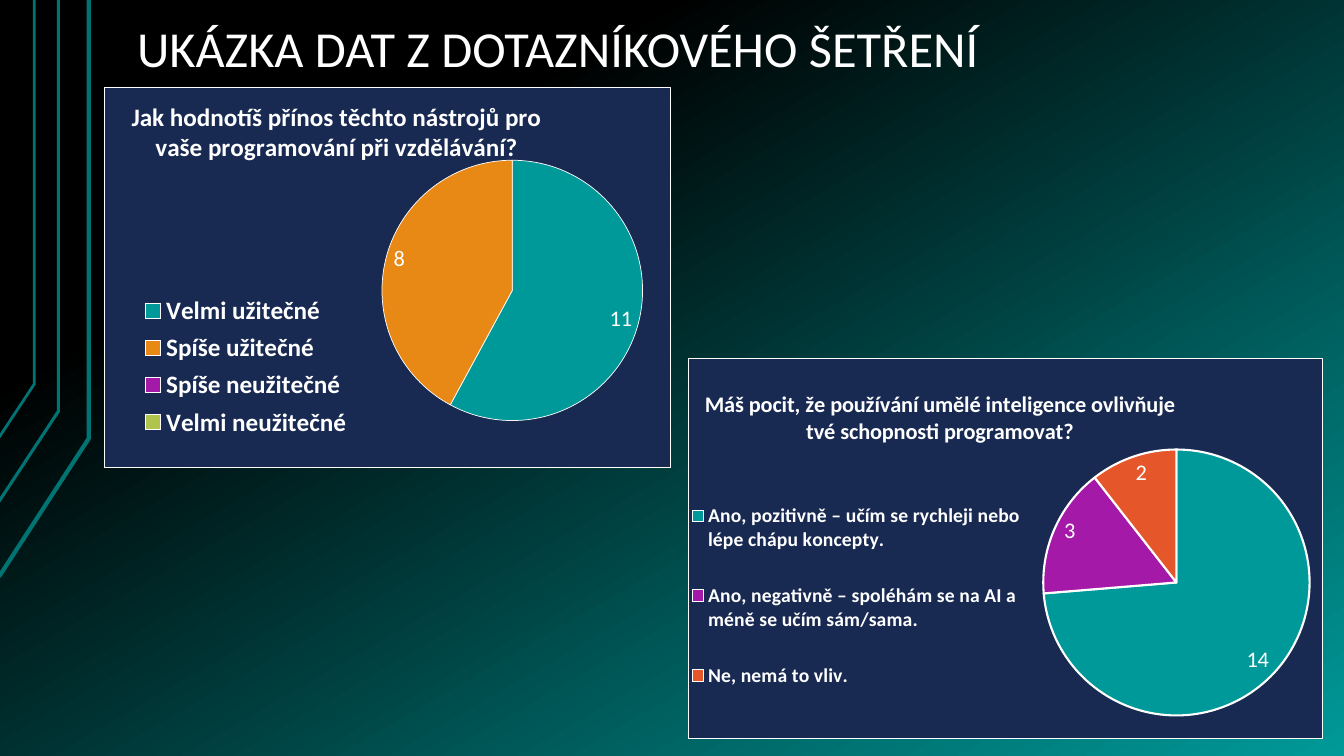
from lxml import etree
from pptx import Presentation
from pptx.chart.data import CategoryChartData
from pptx.dml.color import RGBColor
from pptx.enum.chart import XL_CHART_TYPE as CT, XL_LABEL_POSITION as LP, XL_LEGEND_POSITION as LG
from pptx.enum.text import MSO_ANCHOR
from pptx.oxml import parse_xml
from pptx.oxml.ns import nsdecls, qn
from pptx.util import Inches, Pt

WHITE = RGBColor(0xFF, 0xFF, 0xFF)
BLACK = RGBColor(0, 0, 0)
TEAL = RGBColor(0x00, 0x99, 0x99)
DARK_TEAL = RGBColor(0x00, 0x73, 0x73)
NAVY = RGBColor(0x19, 0x2A, 0x52)
ORANGE = RGBColor(0xE9, 0x89, 0x15)
PURPLE = RGBColor(0xA4, 0x19, 0xA7)
GREEN = RGBColor(0xAF, 0xC3, 0x4D)
RED = RGBColor(0xE5, 0x57, 0x2B)
FONT = "Calibri"

TITLE = "UKÁZKA DAT Z DOTAZNÍKOVÉHO ŠETŘENÍ"
TRACES = [
    ([(-0.01, 5.72), (0.88, 4.35), (0.88, 0)], 3),
    ([(-0.02, 4.99), (0.58, 4.08), (0.58, 0)], 2.25),
    ([(-0.01, 4.34), (0.34, 3.81), (0.34, 0)], 2),
]
CHARTS = [
    {
        "at": (1.03, 0.86, 5.63, 3.78),
        "title": "Jak hodnotíš přínos těchto nástrojů pro vaše programování při vzdělávání?",
        "answers": [
            ("Velmi užitečné", 11, TEAL),
            ("Spíše užitečné", 8, ORANGE),
            ("Spíše neužitečné", None, PURPLE),
            ("Velmi neužitečné", None, GREEN),
        ],
        "title_size": 18, "legend_size": 18, "outline": 0.5,
        "title_at": (0.04, 0.02),
        "legend_at": (0.06, 0.53, 0.38, 0.41),
        "plot_at": (0.49, 0.19, 0.46, 0.69),
    },
    {
        "at": (6.82, 3.55, 6.3, 3.78),
        "title": "Máš pocit, že používání umělé inteligence ovlivňuje tvé schopnosti programovat?",
        "answers": [
            ("Ano, pozitivně – učím se rychleji nebo\nlépe chápu koncepty.", 14, TEAL),
            ("Ano, negativně – spoléhám se na AI a\nméně se učím sám/sama.", 3, PURPLE),
            ("Ne, nemá to vliv.", 2, RED),
        ],
        "title_size": 16, "legend_size": 14, "outline": 1.5,
        "title_at": (0.02, 0.07),
        "legend_at": (0, 0.3, 0.53, 0.65),
        "plot_at": (0.56, 0.24, 0.42, 0.7),
    },
]


def set_format(target, values):
    for name, value in values.items():
        setattr(target, name, value)


def set_font(font, size, bold=False):
    set_format(font, {"size": Pt(size), "bold": bold, "name": FONT})
    font.color.rgb = WHITE


def set_layout(parent, index, box, inner=False):
    for old in parent.findall(qn("c:layout")):
        parent.remove(old)
    layout = parse_xml(f"<c:layout {nsdecls('c')}><c:manualLayout/></c:layout>")
    settings = [("layoutTarget", "inner")] if inner else []
    settings += [("xMode", "edge"), ("yMode", "edge"), *zip("xywh", box)]
    for name, value in settings:
        etree.SubElement(layout[0], qn(f"c:{name}")).set("val", str(value))
    parent.insert(index, layout)


def add_trace(slide, points, width):
    start, *rest = [(Inches(x), Inches(y)) for x, y in points]
    builder = slide.shapes.build_freeform(*start)
    builder.add_line_segments(rest, close=False)
    sp = builder.convert_to_shape()
    sp.shadow.inherit = False
    sp.fill.background()
    sp.line.color.rgb = DARK_TEAL
    sp.line.width = Pt(width)


def add_pie(slide, item):
    names, values, colors = zip(*item["answers"])
    data = CategoryChartData()
    data.categories = names
    data.add_series("Series 1", values)
    box = [Inches(v) for v in item["at"]]
    chart = slide.shapes.add_chart(CT.PIE, *box, data).chart
    set_font(chart.font, 10)

    chart.has_title = True
    tf = chart.chart_title.text_frame
    tf.text = item["title"]
    set_font(tf.paragraphs[0].runs[0].font, item["title_size"], True)

    chart.has_legend = True
    set_format(chart.legend, {"position": LG.BOTTOM, "include_in_layout": False})
    set_font(chart.legend.font, item["legend_size"], True)

    plot = chart.plots[0]
    plot.vary_by_categories = True
    plot.has_data_labels = True
    set_format(plot.data_labels, {"show_value": True, "show_percentage": False,
                                  "position": LP.BEST_FIT})
    set_font(plot.data_labels.font, 16)
    for i, color in enumerate(colors):
        part = plot.series[0].points[i].format
        part.fill.solid()
        part.fill.fore_color.rgb = color
        part.line.color.rgb = WHITE
        part.line.width = Pt(item["outline"])

    root = chart.element if hasattr(chart, "element") else chart._chartSpace
    set_layout(root.find(".//" + qn("c:title")), 1, item["title_at"])
    set_layout(root.find(".//" + qn("c:legend")), 1, item["legend_at"])
    set_layout(root.find(".//" + qn("c:plotArea")), 0, item["plot_at"], True)
    root.find(qn("c:txPr")).addprevious(parse_xml(
        f'<c:spPr {nsdecls("c", "a")}><a:solidFill><a:srgbClr val="{NAVY}"/></a:solidFill>'
        f'<a:ln w="{Pt(0.75)}"><a:solidFill><a:srgbClr val="{WHITE}"/></a:solidFill></a:ln></c:spPr>'))


def add_title(slide):
    sp = slide.shapes.add_textbox(Inches(1.23), Inches(0.13), Inches(11.33), Inches(0.72))
    tf = sp.text_frame
    set_format(tf, {"word_wrap": True, "vertical_anchor": MSO_ANCHOR.BOTTOM,
                    "margin_left": Inches(0.13), "margin_right": Inches(0.13),
                    "margin_top": Inches(0.07), "margin_bottom": Inches(0.07)})
    p = tf.paragraphs[0]
    p.line_spacing = 0.9
    r = p.add_run()
    r.text = TITLE
    set_font(r.font, 36)


def main():
    prs = Presentation()
    prs.slide_width, prs.slide_height = Inches(13.33), Inches(7.5)
    slide = prs.slides.add_slide(prs.slide_layouts[6])
    fill = slide.background.fill
    fill.gradient()
    fill.gradient_angle = 300
    for stop, (position, color) in zip(fill.gradient_stops, [(0.25, BLACK), (1, TEAL)]):
        stop.position = position
        stop.color.rgb = color
    for points, width in TRACES:
        add_trace(slide, points, width)
    for item in CHARTS:
        add_pie(slide, item)
    add_title(slide)
    prs.save("out.pptx")


if __name__ == "__main__":
    main()
